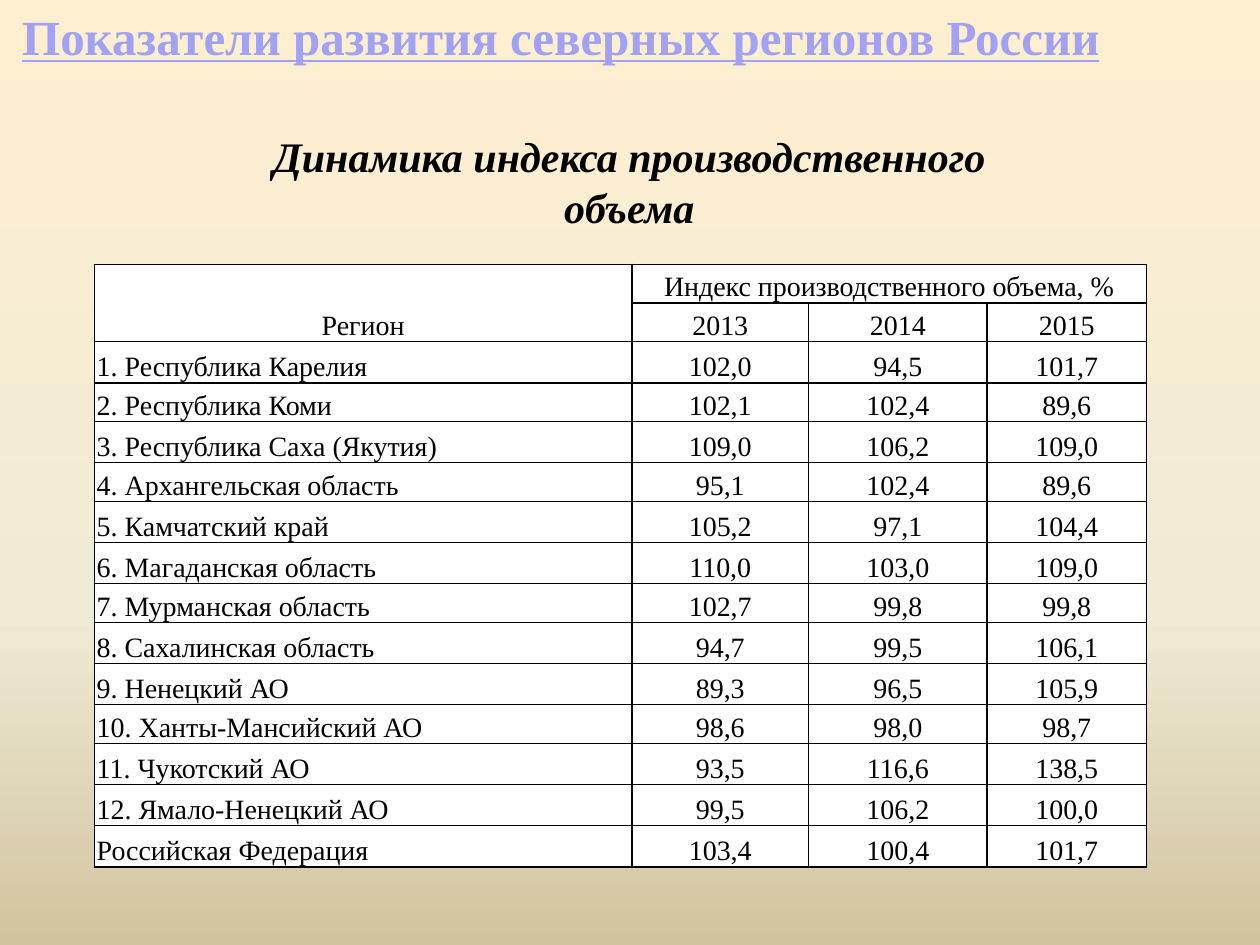
from copy import deepcopy
from dataclasses import dataclass

from pptx import Presentation
from pptx import util as u
from pptx.dml.color import RGBColor
from pptx.enum import text
from pptx.oxml import parse_xml
from pptx.oxml.ns import nsdecls, qn


@dataclass(frozen=True)
class Theme:
    font: str = "Times New Roman"
    ink: str = "000000"
    cell: str = "FFFFFF"
    title_size: int = 28
    subtitle_size: int = 24
    table_size: int = 16
    line_spacing: float = 1.15
    border_width: float = 1
    page_stops: tuple = ((0, "FFEFD1"), (0.65, "F0EBD5"), (1, "D1C39F"))
    title_stops: tuple = ((0, "50507E"), (0.78, "A1A1F5"), (1, "F5F5FF"))


@dataclass(frozen=True)
class Frame:
    left: float
    top: float
    width: float
    height: float

    def lengths(self) -> tuple:
        return tuple(u.Cm(v) for v in (self.left, self.top, self.width, self.height))


@dataclass(frozen=True)
class Region:
    name: str
    indices: tuple
    height: float


THEME = Theme()
TITLE_FRAME = Frame(0.08, 0, 22.45, 1.45)
SUBTITLE_FRAME = Frame(4.29, 2.51, 16.79, 2.31)
TABLE_FRAME = Frame(1.9, 5.33, 21.21, 12.14)
COLUMN_WIDTHS = (10.84, 3.56, 3.6, 3.21)
HEADER_HEIGHTS = (0.48, 0.66)
LOW, TALL = 0.66, 0.83

YEARS = ("2013", "2014", "2015")
REGIONS = (
    Region("1. Республика Карелия", ("102,0", "94,5", "101,7"), TALL),
    Region("2. Республика Коми", ("102,1", "102,4", "89,6"), LOW),
    Region("3. Республика Саха (Якутия)", ("109,0", "106,2", "109,0"), TALL),
    Region("4. Архангельская область", ("95,1", "102,4", "89,6"), LOW),
    Region("5. Камчатский край", ("105,2", "97,1", "104,4"), TALL),
    Region("6. Магаданская область", ("110,0", "103,0", "109,0"), TALL),
    Region("7. Мурманская область", ("102,7", "99,8", "99,8"), LOW),
    Region("8. Сахалинская область", ("94,7", "99,5", "106,1"), TALL),
    Region("9. Ненецкий АО", ("89,3", "96,5", "105,9"), TALL),
    Region("10. Ханты-Мансийский АО", ("98,6", "98,0", "98,7"), LOW),
    Region("11. Чукотский АО", ("93,5", "116,6", "138,5"), TALL),
    Region("12. Ямало-Ненецкий АО", ("99,5", "106,2", "100,0"), TALL),
    Region("Российская Федерация", ("103,4", "100,4", "101,7"), TALL),
)


def paint_gradient(fill, owner, stops: tuple) -> None:
    """Apply a top-to-bottom gradient to a fill inside the owner element."""
    fill.gradient()
    fill.gradient_angle = 270
    stop_list = next(owner.iter(qn("a:gsLst")))
    while len(stop_list) < len(stops):
        stop_list.append(deepcopy(stop_list[-1]))
    for stop, (position, color) in zip(fill.gradient_stops, stops):
        stop.position = position
        stop.color.rgb = RGBColor.from_string(color)


def style_para(para, size: int, align=text.PP_ALIGN.CENTER) -> None:
    para.alignment = align
    para.font.name = THEME.font
    para.font.size = u.Pt(size)
    para.font.color.rgb = RGBColor.from_string(THEME.ink)


def add_borders(cell) -> None:
    properties = cell._tc.get_or_add_tcPr()
    for index, side in enumerate(("lnL", "lnR", "lnT", "lnB")):
        properties.insert(index, parse_xml(
            f'<a:{side} {nsdecls("a")} w="{u.Pt(THEME.border_width)}"><a:solidFill>'
            f'<a:srgbClr val="{THEME.ink}"/></a:solidFill></a:{side}>'))


def style_cell(cell, align) -> None:
    cell.fill.solid()
    cell.fill.fore_color.rgb = RGBColor.from_string(THEME.cell)
    cell.vertical_anchor = text.MSO_ANCHOR.BOTTOM
    cell.margin_left = cell.margin_right = u.Cm(0.05)
    cell.margin_top = cell.margin_bottom = 0
    para = cell.text_frame.paragraphs[0]
    style_para(para, THEME.table_size, align)
    para.line_spacing = THEME.line_spacing
    add_borders(cell)


def add_title(page, wording: str) -> None:
    title = page.shapes.title
    title.left, title.top, title.width, title.height = TITLE_FRAME.lengths()
    title.text_frame.text = wording
    title.text_frame.word_wrap = False
    title.text_frame.auto_size = text.MSO_AUTO_SIZE.SHAPE_TO_FIT_TEXT
    para = title.text_frame.paragraphs[0]
    style_para(para, THEME.title_size)
    para.font.bold = para.font.underline = True
    paint_gradient(para.font.fill, para._p, THEME.title_stops)


def add_subtitle(page, wording: str) -> None:
    box = page.shapes.add_textbox(*SUBTITLE_FRAME.lengths())
    box.text_frame.word_wrap = True
    box.text_frame.auto_size = text.MSO_AUTO_SIZE.SHAPE_TO_FIT_TEXT
    box.text_frame.text = wording
    para = box.text_frame.paragraphs[0]
    style_para(para, THEME.subtitle_size)
    para.font.bold = para.font.italic = True


def add_index_table(page) -> None:
    rows = [("Регион", "Индекс производственного объема, %", "", ""), ("", *YEARS)]
    rows += [(region.name, *region.indices) for region in REGIONS]
    heights = (*HEADER_HEIGHTS, *(region.height for region in REGIONS))
    table = page.shapes.add_table(
        len(rows), len(COLUMN_WIDTHS), *TABLE_FRAME.lengths()).table
    table.first_row = table.horz_banding = False

    for column, width in zip(table.columns, COLUMN_WIDTHS):
        column.width = u.Cm(width)
    for row, height in zip(table.rows, heights):
        row.height = u.Cm(height)

    # Region names run left, everything else is centred
    for r, values in enumerate(rows):
        for c, value in enumerate(values):
            cell = table.cell(r, c)
            cell.text = value
            is_name = c == 0 and r >= len(HEADER_HEIGHTS)
            style_cell(cell, text.PP_ALIGN.LEFT if is_name else text.PP_ALIGN.CENTER)

    # Joined header cells
    table.cell(0, 0).merge(table.cell(1, 0))
    table.cell(0, 1).merge(table.cell(0, len(YEARS)))


def main() -> None:
    deck = Presentation()
    deck.slide_width, deck.slide_height = u.Cm(25.4), u.Cm(19.05)
    page = deck.slides.add_slide(deck.slide_layouts.get_by_name("Title Only"))

    # Background
    paint_gradient(page.background.fill, page.element, THEME.page_stops)

    # Content
    add_index_table(page)
    add_title(page, "Показатели развития северных регионов России")
    add_subtitle(page, "Динамика индекса производственного объема")
    deck.save("out.pptx")


if __name__ == "__main__":
    main()
